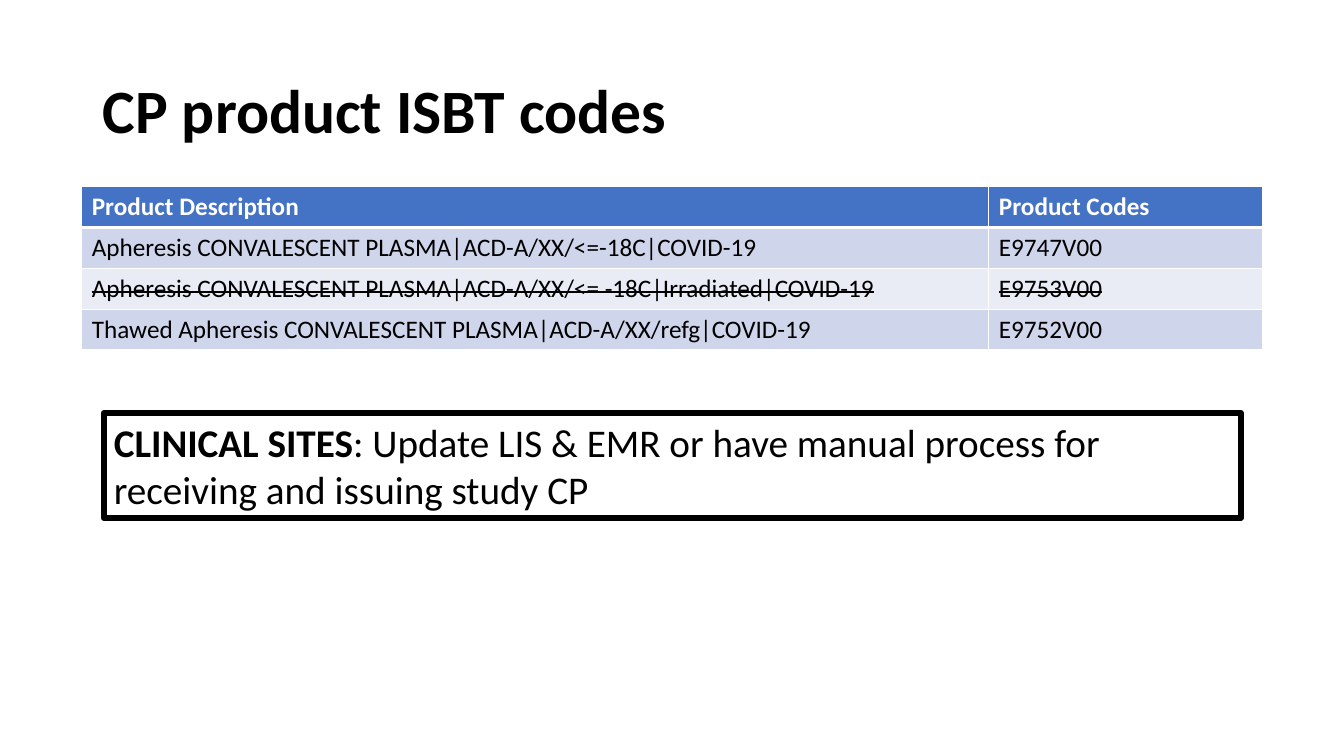
from lxml.etree import SubElement
from pptx import Presentation
from pptx.dml.color import RGBColor
from pptx.enum.shapes import MSO_SHAPE
from pptx.enum.text import MSO_ANCHOR, PP_ALIGN
from pptx.oxml.ns import qn
from pptx.util import Cm, Pt


def color(value):
    """Turn a hex string into a colour."""
    return RGBColor.from_string(value)


class SlideBuilder:
    """Hold the style and the current slide."""

    font = "Calibri"
    black, white, header = "000000", "FFFFFF", "4472C4"
    bands = ("CFD5EA", "E9EBF5")

    def __init__(self, deck):
        """Add a blank page to the deck."""
        self.page = deck.slides.add_slide(deck.slide_layouts[6])

    def fill_text(self, frame, spans, size, ink=black, spacing=1.0):
        """Fill a frame with one paragraph of (text, format) spans."""
        frame.word_wrap = True
        para = frame.paragraphs[0]
        para.alignment = PP_ALIGN.LEFT
        para.line_spacing = spacing
        for text, extra in spans:
            span = para.add_run()
            span.text = text
            values = {"name": self.font, "size": Pt(size), "bold": False, **extra}
            for name, value in values.items():
                setattr(span.font, name, value)
            span.font.color.rgb = color(ink)

    def title(self, text, area):
        """Add the slide title."""
        frame = self.page.shapes.add_textbox(*map(Cm, area)).text_frame
        frame.vertical_anchor = MSO_ANCHOR.MIDDLE
        self.fill_text(frame, [(text, {"bold": True})], 44, spacing=0.9)

    def borders(self, cell, widths):
        """Draw the white borders of a cell, given widths by side."""
        properties = cell._tc.get_or_add_tcPr()
        for side, width in widths.items():
            line = SubElement(properties, qn(f"a:ln{side}"), w=str(int(Pt(width))))
            fill = SubElement(line, qn("a:solidFill"))
            SubElement(fill, qn("a:srgbClr"), val=self.white)

    def table(self, rows, left, top, widths, row_height, struck):
        """Add a banded table with a header row and struck-out rows."""
        area = (left, top, sum(widths), row_height * len(rows))
        grid = self.page.shapes.add_table(len(rows), len(widths), *map(Cm, area)).table
        for column, width in zip(grid.columns, widths):
            column.width = Cm(width)
        for index, row in enumerate(rows):
            grid.rows[index].height = Cm(row_height)
            is_header = index == 0
            for cell, text in zip(grid.rows[index].cells, row):
                ink = self.white if is_header else self.black
                self.fill_text(cell.text_frame, [(text, {"bold": is_header})], 18, ink)
                if index in struck:
                    span = cell.text_frame.paragraphs[0].runs[0]
                    span._r.get_or_add_rPr().set("strike", "sngStrike")
                top_width = 3 if index == 1 else 1
                bottom_width = 3 if is_header else 1
                self.borders(cell, {"L": 1, "R": 1, "T": top_width, "B": bottom_width})
                cell.fill.solid()
                band = self.header if is_header else self.bands[(index - 1) % 2]
                cell.fill.fore_color.rgb = color(band)

    def callout(self, spans, area):
        """Add an outlined box with rounded line joins."""
        box = self.page.shapes.add_shape(MSO_SHAPE.RECTANGLE, *map(Cm, area))
        box.shadow.inherit = False
        box.fill.background()
        box.line.color.rgb = color(self.black)
        box.line.width = Pt(4.5)
        SubElement(box._element.spPr.find(qn("a:ln")), qn("a:round"))
        box.text_frame.vertical_anchor = MSO_ANCHOR.TOP
        self.fill_text(box.text_frame, spans, 28)


def main():
    """Build the deck and save it."""
    deck = Presentation()
    deck.slide_width, deck.slide_height = Cm(33.87), Cm(19.05)
    slide = SlideBuilder(deck)
    slide.title("CP product ISBT codes", (2.34, 1.02, 29.21, 3.68))
    rows = [
        ("Product Description", "Product Codes"),
        ("Apheresis CONVALESCENT PLASMA|ACD-A/XX/<=-18C|COVID-19", "E9747V00"),
        ("Apheresis CONVALESCENT PLASMA|ACD-A/XX/<= -18C|Irradiated|COVID-19", "E9753V00"),
        ("Thawed Apheresis CONVALESCENT PLASMA|ACD-A/XX/refg|COVID-19", "E9752V00"),
    ]
    slide.table(rows, 2.06, 4.7, (22.86, 6.91), 1.03, struck={2})
    instruction = ": Update LIS & EMR or have manual process for receiving and issuing study CP"
    spans = [("CLINICAL SITES", {"bold": True}), (instruction, {})]
    slide.callout(spans, (2.62, 10.41, 28.65, 2.64))
    deck.save("out.pptx")


if __name__ == "__main__":
    main()
